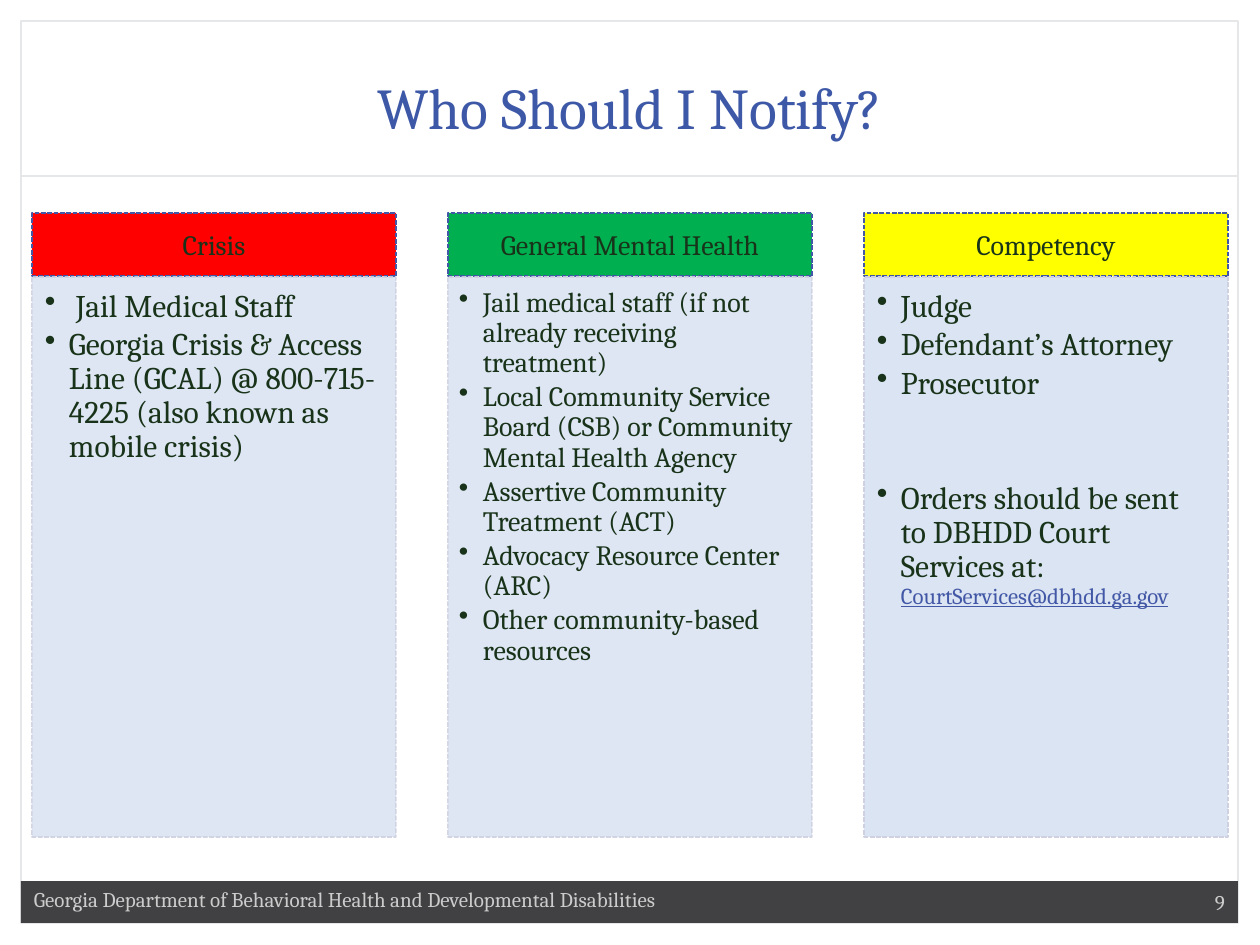
from dataclasses import dataclass
from typing import Optional

from lxml.etree import SubElement
from pptx import Presentation
from pptx.dml.color import RGBColor
from pptx.enum.dml import MSO_LINE
from pptx.enum.shapes import MSO_CONNECTOR, MSO_SHAPE
from pptx.enum.text import MSO_ANCHOR as ANCHOR, PP_ALIGN as ALIGN
from pptx.oxml.ns import qn
from pptx.util import Emu, Pt

PX = 914400 / 126  # EMU per px
FONT = "Cambria"
INK, BLUE, PALE = "183319", "4258A7", "DBE4F2"
FRAME, BAR, FOOT_INK = "E6E7E8", "414042", "CCCCCC"

LEFT, PITCH, COL_W = 32, 416, 364
HEAD_Y, HEAD_H, BODY_Y, BODY_H = 213, 63, 277, 560


@dataclass
class Bullet:
    text: str
    gap_before: float = 0
    email: str = ""


@dataclass
class Column:
    title: str
    color: str
    size: int
    insets: tuple[int, int, int, int]
    bullets: list[Bullet]
    alpha: Optional[int] = None


COLUMNS = [
    Column("Crisis", "FF0000", 18, (13, 13, 18, 20), [
        Bullet(" Jail Medical Staff"),
        Bullet("Georgia Crisis & Access Line (GCAL) @ 800-715-4225 "
               "(also known as mobile crisis)"),
    ], 90),
    Column("General Mental Health", "00B050", 16, (11, 11, 15, 18), [
        Bullet("Jail medical staff (if not already receiving treatment)"),
        Bullet("Local Community Service Board (CSB) or Community "
               "Mental Health Agency"),
        Bullet("Assertive Community Treatment (ACT)"),
        Bullet("Advocacy Resource Center (ARC)"),
        Bullet("Other community-based resources"),
    ], 90),
    Column("Competency", "FFFF00", 18, (13, 13, 18, 20), [
        Bullet("Judge"),
        Bullet("Defendant’s Attorney"),
        Bullet("Prosecutor"),
        Bullet("Orders should be sent to DBHDD Court Services at:", 44,
               "CourtServices@dbhdd.ga.gov"),
    ]),
]


def px(n: float) -> Emu:
    return Emu(round(n * PX))


def rgb(color: str) -> RGBColor:
    return RGBColor.from_string(color)


def set_alpha(shape, percent: int) -> None:
    for clr in shape._element.spPr.iter(qn("a:srgbClr")):
        SubElement(clr, qn("a:alpha"), val=str(percent * 1000))


def add_rect(s, x: int, y: int, w: int, h: int, fill: Optional[str] = None,
             line: Optional[str] = None, width: float = 0.75, dashed: bool = False):
    sp = s.shapes.add_shape(MSO_SHAPE.RECTANGLE, px(x), px(y), px(w), px(h))
    sp.shadow.inherit = False
    if fill:
        sp.fill.solid()
        sp.fill.fore_color.rgb = rgb(fill)
    else:
        sp.fill.background()
    if line:
        sp.line.color.rgb = rgb(line)
        sp.line.width = Pt(width)
        if dashed:
            sp.line.dash_style = MSO_LINE.SQUARE_DOT
    else:
        sp.line.fill.background()
    return sp


def set_frame(sp, anchor: ANCHOR, insets: tuple[int, int, int, int] = (13, 6, 13, 6)):
    tf = sp.text_frame
    tf.word_wrap = True
    tf.vertical_anchor = anchor
    (tf.margin_left, tf.margin_top,
     tf.margin_right, tf.margin_bottom) = map(px, insets)
    return tf


def add_run(p, text: str, size: int, color: str, underline: Optional[bool] = None) -> None:
    r = p.add_run()
    r.text = text
    r.font.name, r.font.size = FONT, Pt(size)
    r.font.color.rgb = rgb(color)
    r.font.underline = underline


def add_line(tf, text: str, size: int, color: str, align: ALIGN) -> None:
    p = tf.paragraphs[0]
    p.alignment = align
    add_run(p, text, size, color)


def add_textbox(s, x: int, y: int, w: int, h: int, anchor: ANCHOR):
    return set_frame(s.shapes.add_textbox(px(x), px(y), px(w), px(h)), anchor)


def add_bullet(p, bullet: Bullet, size: int) -> None:
    p.alignment = ALIGN.LEFT
    p.line_spacing = 0.9
    p.space_before, p.space_after = Pt(bullet.gap_before), Pt(0.14 * size)
    pPr = p._p.get_or_add_pPr()
    pPr.set("marL", str(px(24)))
    pPr.set("indent", str(-px(24)))
    SubElement(pPr, qn("a:buChar"), char="•")
    add_run(p, bullet.text, size, INK)
    if bullet.email:
        p.add_line_break()
        add_run(p, bullet.email, 13, BLUE, True)


def add_column(s, x: int, col: Column) -> None:
    head = add_rect(s, x, HEAD_Y, COL_W, HEAD_H, col.color, BLUE, 0.9, True)
    add_line(set_frame(head, ANCHOR.MIDDLE, (15, 9, 15, 9)),
             col.title, 16, INK, ALIGN.CENTER)

    body = add_rect(s, x, BODY_Y, COL_W, BODY_H, PALE, "CFD1E1", 0.9, True)
    if col.alpha:
        set_alpha(body, col.alpha)
    tf = set_frame(body, ANCHOR.TOP, col.insets)
    for i, bullet in enumerate(col.bullets):
        p = tf.add_paragraph() if i else tf.paragraphs[0]
        add_bullet(p, bullet, col.size)


def add_rule(s, x1: int, x2: int, y: int) -> None:
    c = s.shapes.add_connector(MSO_CONNECTOR.STRAIGHT, px(x1), px(y), px(x2), px(y))
    c.line.color.rgb = rgb(FRAME)
    c.line.width = Pt(0.75)
    SubElement(c._element.spPr, qn("a:effectLst"))


def main() -> None:
    prs = Presentation()
    prs.slide_width, prs.slide_height = px(1260), px(945)
    s = prs.slides.add_slide(prs.slide_layouts[6])

    # Frame, rule and footer
    add_rect(s, 21, 21, 1217, 902, line=FRAME)
    add_rule(s, 21, 1238, 176)
    bar = add_rect(s, 21, 881, 1217, 42, BAR)
    add_line(set_frame(bar, ANCHOR.MIDDLE), "9", 12, FOOT_INK, ALIGN.RIGHT)
    add_line(add_textbox(s, 21, 881, 756, 38, ANCHOR.TOP),
             "Georgia Department of Behavioral Health and Developmental Disabilities",
             12, FOOT_INK, ALIGN.LEFT)

    # Title
    add_line(add_textbox(s, 42, 42, 1176, 105, ANCHOR.BOTTOM),
             "Who Should I Notify?", 33, "3D58A7", ALIGN.CENTER)

    # Columns
    for i, col in enumerate(COLUMNS):
        add_column(s, LEFT + i * PITCH, col)

    prs.save("out.pptx")


if __name__ == "__main__":
    main()
